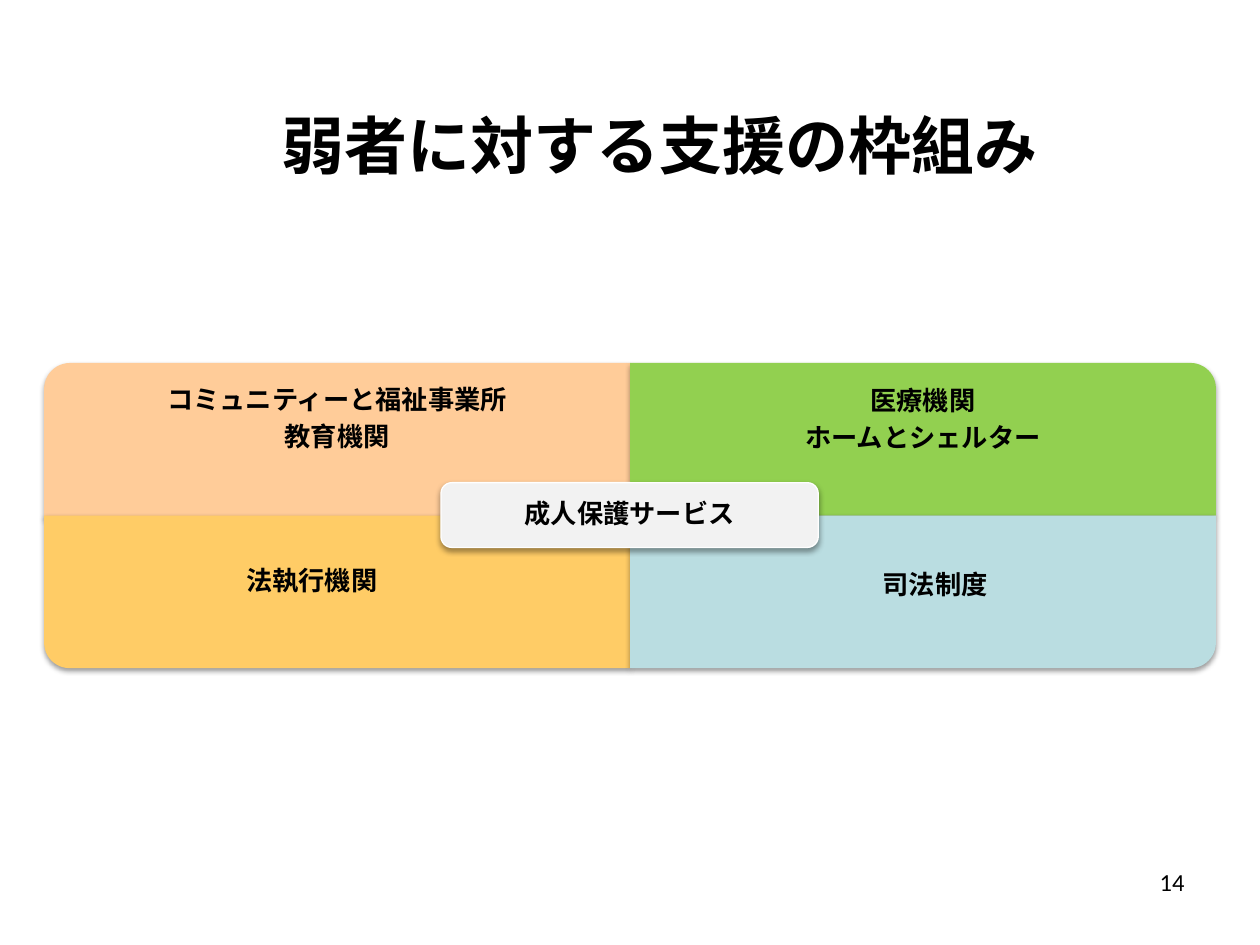
from lxml.etree import SubElement
from pptx import Presentation
from pptx.dml.color import RGBColor
from pptx.enum.shapes import MSO_SHAPE
from pptx.enum.text import MSO_ANCHOR, PP_ALIGN
from pptx.oxml.ns import qn
from pptx.util import Pt

COLORS = {
    "text": "000000",
    "community": "FFCC99",
    "medical": "92D050",
    "police": "FFCC66",
    "justice": "BADDE1",
    "center": "F2F2F2",
    "border": "FFFFFF",
}


class SlideBuilder:
    heading_font = "Calibri"
    label_font = "League Spartan"
    label_size = 15

    def __init__(self, slide):
        self.slide = slide

    def color(self, name):
        return RGBColor.from_string(COLORS[name])

    def add_shadow(self, shape):
        shape.shadow.inherit = False
        effects = shape._element.spPr.find(qn("a:effectLst"))
        shadow = SubElement(effects, qn("a:outerShdw"), blurRad="40000",
                            dist="20000", dir="5400000", rotWithShape="0")
        black = SubElement(shadow, qn("a:srgbClr"), val="000000")
        SubElement(black, qn("a:alpha"), val="38000")

    def panel(self, kind, left, top, width, height, fill, rotation=0, border=None):
        """Add a filled panel covering the given area after rotation."""
        if rotation % 180:
            left, top = left + (width - height) / 2, top + (height - width) / 2
            width, height = height, width
        shape = self.slide.shapes.add_shape(kind, Pt(left), Pt(top), Pt(width), Pt(height))
        shape.rotation = rotation
        shape.fill.solid()
        shape.fill.fore_color.rgb = self.color(fill)
        if border:
            shape.line.color.rgb = self.color(border)
            shape.line.width = Pt(0.75)
        else:
            shape.line.fill.background()
        self.add_shadow(shape)

    def text(self, left, top, width, height, lines, font, size, bold=False,
             align=PP_ALIGN.CENTER, anchor=MSO_ANCHOR.MIDDLE,
             insets=(7.2, 3.6, 7.2, 3.6), line_spacing=None, space_after=None):
        box = self.slide.shapes.add_textbox(Pt(left), Pt(top), Pt(width), Pt(height))
        frame = box.text_frame
        frame.word_wrap = True
        frame.vertical_anchor = anchor
        (frame.margin_left, frame.margin_top,
         frame.margin_right, frame.margin_bottom) = map(Pt, insets)
        for index, line in enumerate(lines):
            paragraph = frame.add_paragraph() if index else frame.paragraphs[0]
            paragraph.alignment = align
            paragraph.line_spacing = line_spacing
            if space_after is not None:
                paragraph.space_after = Pt(space_after)
            run = paragraph.add_run()
            run.text = line
            run.font.name = font
            run.font.size = Pt(size)
            run.font.bold = bold
            run.font.color.rgb = self.color("text")

    def label(self, left, top, width, height, lines, anchor, insets):
        self.text(left, top, width, height, lines, self.label_font, self.label_size,
                  bold=True, anchor=anchor, insets=insets,
                  line_spacing=0.9, space_after=5)


def main():
    presentation = Presentation()
    presentation.slide_width, presentation.slide_height = Pt(720), Pt(540)
    slide = presentation.slides.add_slide(presentation.slide_layouts[6])
    builder = SlideBuilder(slide)

    # Title and slide number
    builder.text(127.5, 37.5, 499, 90, ["弱者に対する支援の枠組み"],
                 builder.heading_font, 36, bold=True)
    builder.text(516, 492, 168, 37.5, ["14"], builder.heading_font, 14,
                 align=PP_ALIGN.RIGHT, anchor=MSO_ANCHOR.TOP)

    # Four quadrants, each with its rounded corner facing outwards
    left, top, width, height = 25.2, 207.4, 334.8, 87.2
    label_height = height * 0.75
    quadrants = [
        # column, row, extra height, rotation, fill, lines, anchor, insets
        (0, 0, 1.4, 270, "community", ["コミュニティーと福祉事業所", "教育機関"],
         MSO_ANCHOR.BOTTOM, (28, 0, 28, 14.2)),
        (1, 0, 0, 0, "medical", ["医療機関", "ホームとシェルター"],
         MSO_ANCHOR.MIDDLE, (14.2, 14.2, 14.2, 14.2)),
        (0, 1, 0, 180, "police", ["法執行機関"],
         MSO_ANCHOR.TOP, (28, 8.5, 57, 8.5)),
        (1, 1, 0, 90, "justice", ["司法制度"],
         MSO_ANCHOR.MIDDLE, (28, 0, 14.2, 28)),
    ]
    for column, row, extra, rotation, fill, lines, anchor, insets in quadrants:
        x, y = left + column * width, top + row * height
        builder.panel(MSO_SHAPE.ROUND_1_RECTANGLE, x, y, width, height + extra,
                      fill, rotation)
        label_top = y + row * (height - label_height)
        builder.label(x, label_top, width, label_height, lines, anchor, insets)

    # Central service
    center = (252, 275.8, 215.6, 37)
    builder.panel(MSO_SHAPE.ROUNDED_RECTANGLE, *center, "center", border="border")
    builder.label(*center, ["成人保護サービス"], MSO_ANCHOR.MIDDLE, (0, 0, 0, 0))

    presentation.save("out.pptx")


if __name__ == "__main__":
    main()
